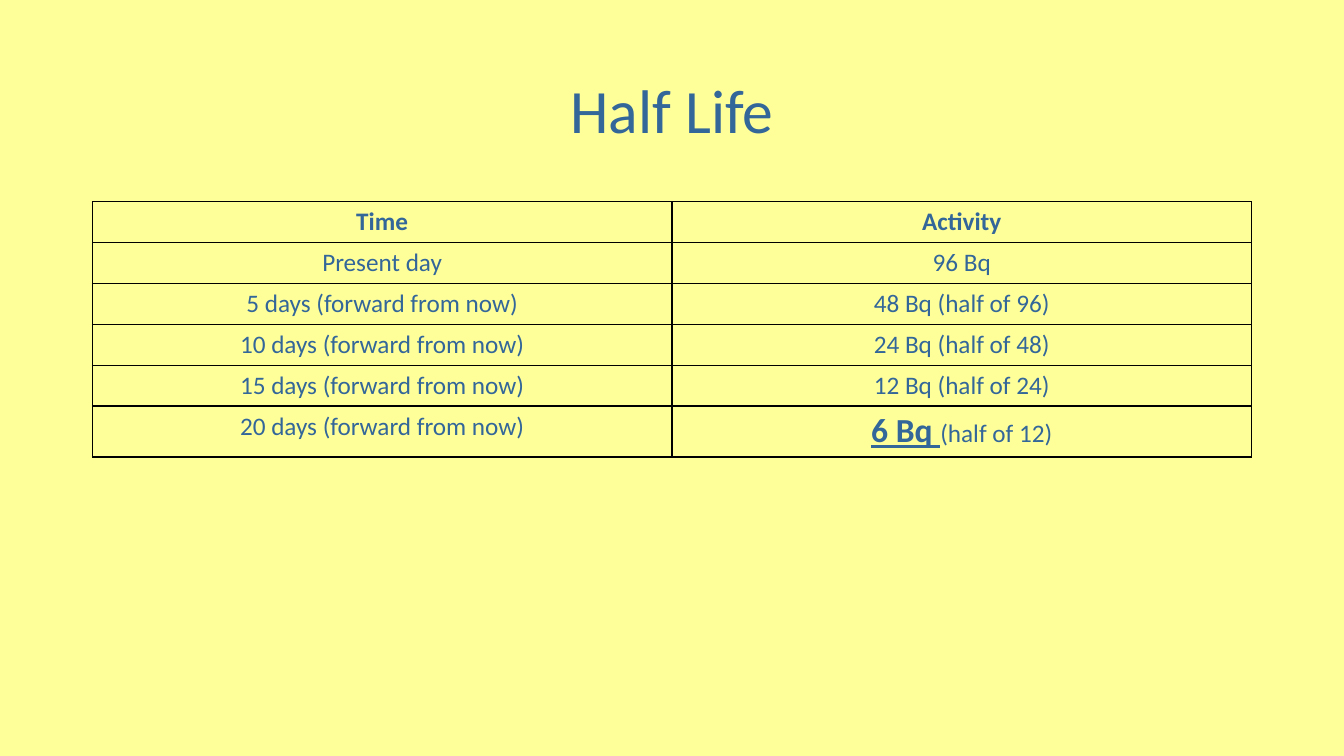
from dataclasses import dataclass

from lxml import etree
from pptx import Presentation
from pptx import util as u
from pptx.dml import color
from pptx.enum import text
from pptx.oxml import ns

FONT = "Calibri"
BLUE = "336699"
YELLOW = "FFFF99"
BLACK = "000000"
LEFT, WIDTH = 66, 828
ROW_HEIGHT, LAST_ROW_HEIGHT = 29.2, 36.4


@dataclass(frozen=True)
class TextRun:
    wording: str
    size: float = 18
    bold: bool = False
    underline: bool = False


@dataclass(frozen=True)
class Reading:
    time: list[TextRun]
    activity: list[TextRun]


READINGS = [
    Reading([TextRun("Time", bold=True)], [TextRun("Activity", bold=True)]),
    Reading([TextRun("Present day")], [TextRun("96 Bq")]),
    Reading([TextRun("5 days (forward from now)")], [TextRun("48 Bq (half of 96)")]),
    Reading([TextRun("10 days (forward from now)")], [TextRun("24 Bq (half of 48)")]),
    Reading([TextRun("15 days (forward from now)")], [TextRun("12 Bq (half of 24)")]),
    Reading(
        [TextRun("20 days (forward from now)")],
        [TextRun("6 Bq ", size=24, bold=True, underline=True), TextRun("(half of 12)")],
    ),
]


def set_color(target, value: str) -> None:
    target.rgb = color.RGBColor.from_string(value)


def add_runs(paragraph, runs: list[TextRun]) -> None:
    paragraph.alignment = text.PP_ALIGN.CENTER
    for item in runs:
        run = paragraph.add_run()
        run.text = item.wording
        run.font.name = FONT
        run.font.size = u.Pt(item.size)
        run.font.bold = item.bold
        run.font.underline = item.underline
        set_color(run.font.color, BLUE)


def add_borders(cell, width: float, value: str) -> None:
    properties = cell._tc.get_or_add_tcPr()
    for index, side in enumerate(("lnL", "lnR", "lnT", "lnB")):
        line = etree.Element(ns.qn(f"a:{side}"), w=str(u.Pt(width)))
        fill = etree.SubElement(line, ns.qn("a:solidFill"))
        etree.SubElement(fill, ns.qn("a:srgbClr"), val=value)
        properties.insert(index, line)


def format_title(slide, wording: str) -> None:
    title = slide.shapes.title
    title.left, title.top = u.Pt(LEFT), u.Pt(28.8)
    title.width, title.height = u.Pt(WIDTH), u.Pt(104.4)
    title.text_frame.vertical_anchor = text.MSO_ANCHOR.MIDDLE
    paragraph = title.text_frame.paragraphs[0]
    paragraph.line_spacing = 0.9
    add_runs(paragraph, [TextRun(wording, size=44)])


def add_readings(slide, readings: list[Reading]) -> None:
    height = ROW_HEIGHT * (len(readings) - 1) + LAST_ROW_HEIGHT
    frame = slide.shapes.add_table(
        len(readings), 2, u.Pt(LEFT), u.Pt(144), u.Pt(WIDTH), u.Pt(height)
    )
    table = frame.table
    table.horz_banding = False
    for row, reading in zip(table.rows, readings):
        row.height = u.Pt(ROW_HEIGHT)
        for cell, runs in zip(row.cells, (reading.time, reading.activity)):
            cell.fill.background()
            add_borders(cell, 1, BLACK)
            add_runs(cell.text_frame.paragraphs[0], runs)
    table.rows[len(readings) - 1].height = u.Pt(LAST_ROW_HEIGHT)


def main() -> None:
    presentation = Presentation()
    presentation.slide_width, presentation.slide_height = u.Pt(960), u.Pt(540)
    slide = presentation.slides.add_slide(presentation.slide_layouts.get_by_name("Title Only"))
    slide.background.fill.solid()
    set_color(slide.background.fill.fore_color, YELLOW)
    format_title(slide, "Half Life")
    add_readings(slide, READINGS)
    presentation.save("out.pptx")


if __name__ == "__main__":
    main()
